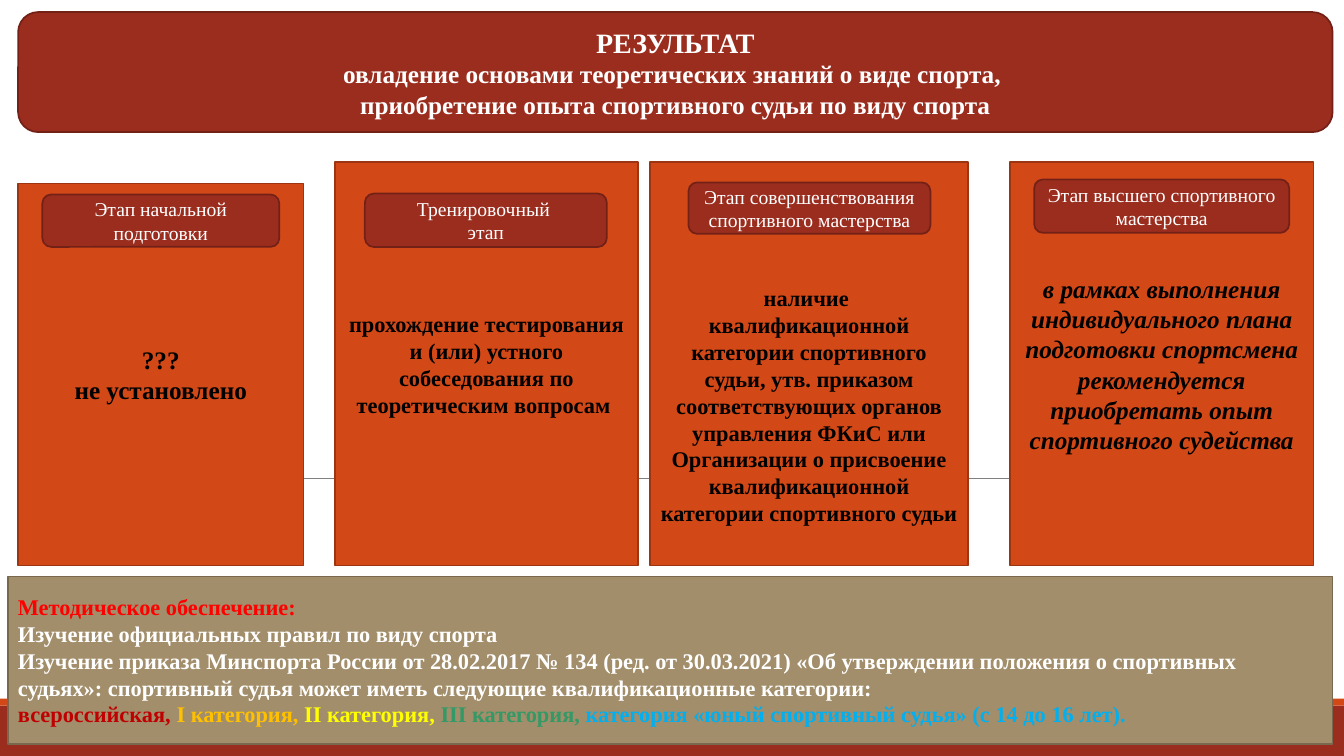
"""Build the slide on theory and refereeing results by training stage."""
import dataclasses

import lxml.etree
import pptx
import pptx.dml.color
import pptx.enum.shapes
import pptx.enum.text
import pptx.oxml.ns
import pptx.util

RECTANGLE = pptx.enum.shapes.MSO_SHAPE.RECTANGLE
ROUNDED = pptx.enum.shapes.MSO_SHAPE.ROUNDED_RECTANGLE
LEFT = pptx.enum.text.PP_ALIGN.LEFT
CENTER = pptx.enum.text.PP_ALIGN.CENTER
WIDTH = pptx.util.Inches(13.33)
HEIGHT = pptx.util.Inches(7.5)


@dataclasses.dataclass(frozen=True)
class Theme:
    """Colours, type sizes and line widths of the slide."""

    font: str = "Times New Roman"
    heading: int = 20
    large: int = 18
    body: int = 16
    label: int = 14
    outline: float = 1.25
    hairline: float = 0.5
    white: str = "FFFFFF"
    black: str = "000000"
    grey: str = "808080"
    brick: str = "9B2D1F"
    brick_edge: str = "732117"
    orange: str = "D34817"
    orange_edge: str = "9C3511"
    sand: str = "A28E6A"
    sand_edge: str = "78694E"
    red: str = "FF0000"
    crimson: str = "C00000"
    amber: str = "FFC000"
    yellow: str = "FFFF00"
    green: str = "339966"
    blue: str = "00B0F0"


THEME = Theme()


@dataclasses.dataclass(frozen=True)
class Stage:
    """One training stage: its card, its label and what it requires."""

    card: tuple
    badge: tuple
    label: list
    result: list
    size: int = THEME.body
    italic: bool = False
    insets: tuple = (0.1, 0.05, 0.1, 0.05)


STAGES = [
    Stage((1.35, 24.27, 21.23, 50.53), (3.15, 25.73, 17.63, 6.93),
          ["Этап начальной подготовки"], ["???", "не установлено"],
          size=THEME.large, insets=(0.04, 0, 0.04, 0)),
    Stage((24.9, 21.47, 22.58, 53.33), (27.15, 25.6, 18, 7.07),
          ["Тренировочный ", "этап"],
          ["прохождение тестирования и (или) устного собеседования "
           "по теоретическим вопросам "]),
    Stage((48.38, 21.47, 23.63, 53.33), (51.23, 24.13, 18, 6.8),
          ["Этап совершенствования спортивного мастерства"],
          ["наличие ",
           "квалификационной категории спортивного судьи, утв. приказом "
           "соответствующих органов управления ФКиС или Организации о присвоение "
           "квалификационной категории спортивного судьи"],
          insets=(0.1, 0.87, 0.1, 0.05)),
    Stage((75.15, 21.47, 22.58, 53.33), (76.95, 23.73, 18.98, 7.07),
          ["Этап высшего спортивного мастерства"],
          ["в рамках выполнения индивидуального плана подготовки спортсмена "
           "рекомендуется приобретать опыт спортивного судейства"],
          size=THEME.large, italic=True),
]

RESULT = [
    [("РЕЗУЛЬТАТ", {"size": THEME.heading})],
    "овладение основами теоретических знаний о виде спорта, ",
    "приобретение опыта спортивного судьи по виду спорта",
]

METHODS = [
    [("Методическое обеспечение:", {"color": THEME.red})],
    "Изучение официальных правил по виду спорта",
    "Изучение приказа Минспорта России от 28.02.2017 № 134 (ред. от 30.03.2021) "
    "«Об утверждении положения о спортивных судьях»: спортивный судья может иметь "
    "следующие квалификационные категории:",
    [("всероссийская, ", {"color": THEME.crimson}),
     ("I категория, ", {"color": THEME.amber}),
     ("II категория, ", {"color": THEME.yellow}),
     ("III категория, ", {"color": THEME.green}),
     ("категория «юный спортивный судья» (с 14 до 16 лет).", {"color": THEME.blue})],
]


def across(share):
    """Return a percentage of the slide's width."""
    return round(WIDTH * share / 100)


def down(share):
    """Return a percentage of the slide's height."""
    return round(HEIGHT * share / 100)


def rgb(color):
    """Return a colour object for a hex string."""
    return pptx.dml.color.RGBColor.from_string(color)


def add_box(slide, kind, area, fill, edge=None):
    """Add a filled shape whose area is given in percent of the slide."""
    left, top, width, height = area
    shape = slide.shapes.add_shape(
        kind, across(left), down(top), across(width), down(height))
    shape.shadow.inherit = False
    shape.fill.solid()
    shape.fill.fore_color.rgb = rgb(fill)
    if edge:
        shape.line.color.rgb = rgb(edge)
        shape.line.width = pptx.util.Pt(THEME.outline)
    else:
        shape.line.fill.background()
    return shape


def add_rule(slide, start, end, level):
    """Add the thin horizontal line that runs behind the cards."""
    rule = slide.shapes.add_connector(
        pptx.enum.shapes.MSO_CONNECTOR.STRAIGHT,
        across(start), down(level), across(end), down(level))
    rule.line.color.rgb = rgb(THEME.grey)
    rule.line.width = pptx.util.Pt(THEME.hairline)
    lxml.etree.SubElement(
        rule._element.spPr, pptx.oxml.ns.qn("a:effectLst"))


def format_run(run, size, color, bold=False, italic=False):
    """Set the font of one run."""
    run.font.name = THEME.font
    run.font.size = pptx.util.Pt(size)
    run.font.color.rgb = rgb(color)
    run.font.bold = bold
    run.font.italic = italic


def write_text(shape, lines, align=CENTER, insets=(0.1, 0.05, 0.1, 0.05), **style):
    """Write paragraphs, each a string or a list of runs with their own style."""
    frame = shape.text_frame
    frame.word_wrap = True
    frame.vertical_anchor = pptx.enum.text.MSO_ANCHOR.MIDDLE
    (frame.margin_left, frame.margin_top,
     frame.margin_right, frame.margin_bottom) = map(pptx.util.Inches, insets)
    for index, line in enumerate(lines):
        paragraph = frame.add_paragraph() if index else frame.paragraphs[0]
        paragraph.alignment = align
        for text, changes in [(line, {})] if isinstance(line, str) else line:
            run = paragraph.add_run()
            run.text = text
            format_run(run, **{**style, **changes})


def add_stage(slide, stage):
    """Add a stage's card with its label on top."""
    card = add_box(slide, RECTANGLE, stage.card, THEME.orange, THEME.orange_edge)
    write_text(card, stage.result, insets=stage.insets, size=stage.size,
               color=THEME.black, bold=True, italic=stage.italic)
    badge = add_box(slide, ROUNDED, stage.badge, THEME.brick, THEME.brick_edge)
    write_text(badge, stage.label, size=THEME.label, color=THEME.white)


def main():
    """Build and save the presentation."""
    presentation = pptx.Presentation()
    presentation.slide_width = WIDTH
    presentation.slide_height = HEIGHT
    slide = presentation.slides.add_slide(presentation.slide_layouts[6])
    add_box(slide, RECTANGLE, (0, 93.33, 100, 6.67), THEME.brick)
    add_box(slide, RECTANGLE, (0, 92.4, 100, 0.93), THEME.orange)
    add_rule(slide, 9.9, 90.9, 63.33)
    banner = add_box(slide, ROUNDED, (1.35, 1.6, 97.8, 15.87),
                     THEME.brick, THEME.brick_edge)
    write_text(banner, RESULT, size=THEME.large, color=THEME.white, bold=True)
    for stage in STAGES:
        add_stage(slide, stage)
    panel = add_box(slide, RECTANGLE, (0.6, 76.27, 98.55, 22.13),
                    THEME.sand, THEME.sand_edge)
    write_text(panel, METHODS, align=LEFT, size=THEME.body,
               color=THEME.white, bold=True)
    presentation.save("out.pptx")


if __name__ == "__main__":
    main()
